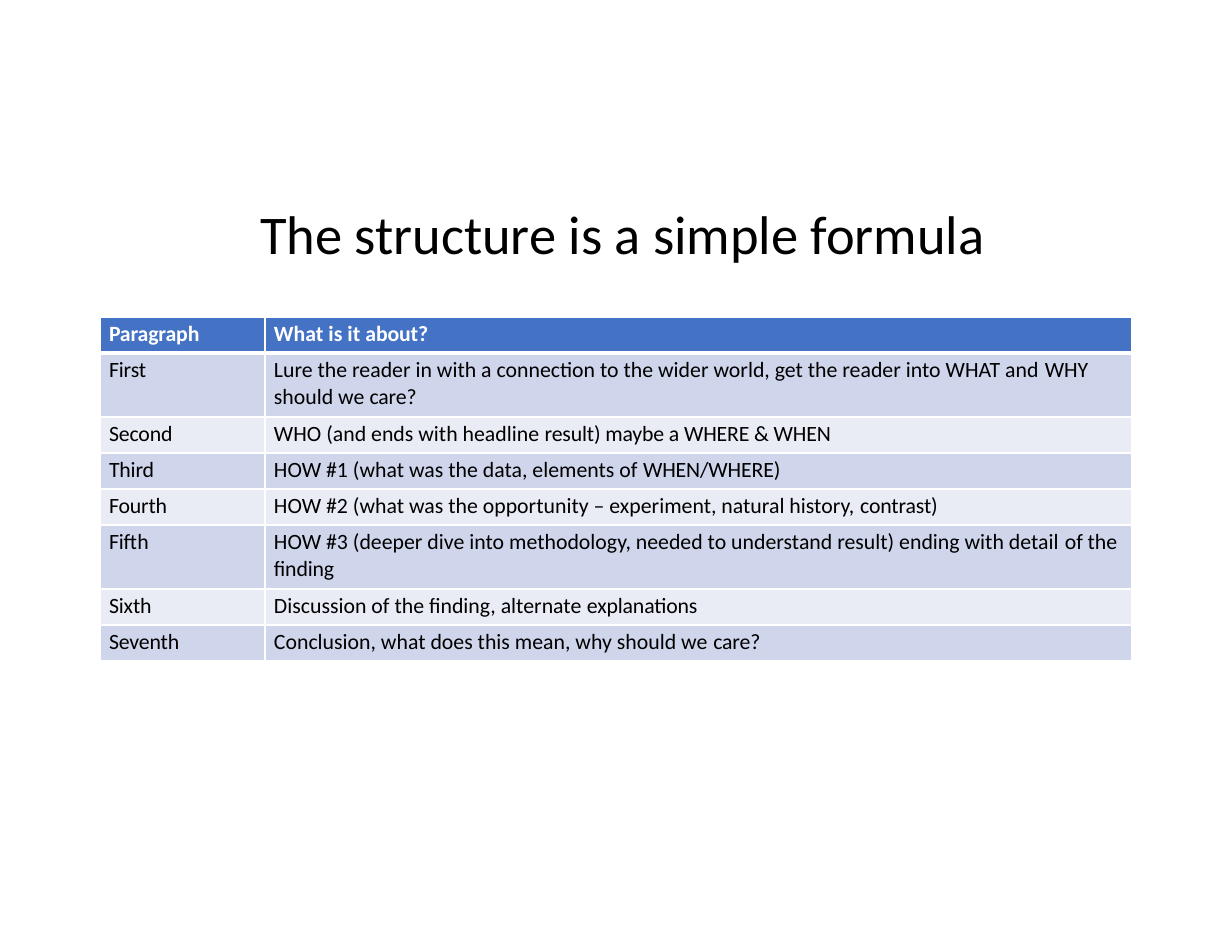
"""Build a slide with a table that outlines a seven-paragraph article."""
from pptx import Presentation
from pptx.dml.color import RGBColor
from pptx.enum.text import MSO_ANCHOR as Anchor, PP_ALIGN as Align
from pptx.oxml import parse_xml
from pptx.oxml.ns import nsdecls
from pptx.util import Emu, Pt

BLACK = RGBColor(0x00, 0x00, 0x00)
WHITE = RGBColor(0xFF, 0xFF, 0xFF)
HEADER_BLUE = RGBColor(0x44, 0x72, 0xC4)
BAND_DARK = RGBColor(0xCF, 0xD5, 0xEA)
BAND_LIGHT = RGBColor(0xE9, 0xEB, 0xF5)

ROWS = [
    ("|Paragraph", "What is it |about?"),
    ("|First", "Lure the reader in with a connection to the wider world, get the reader "
               "into WHAT and |WHY |should we |care?"),
    ("|Second", "WHO (and ends with headline |result) maybe a WHERE & WHEN"),
    ("|Third", "HOW #1 (what was the data, elements of |WHEN/WHERE)"),
    ("|Fourth", "HOW #2 (what was the opportunity – experiment, natural history, |contrast)"),
    ("|Fifth", "HOW #3 (deeper dive into methodology, needed to understand result) "
               "ending with detail |of |the |finding"),
    ("|Sixth", "Discussion of the finding, alternate |explanations"),
    ("|Seventh", "Conclusion, what does this mean, why should we |care?"),
]
COLUMN_WIDTHS = (165, 867)
LINE_HEIGHT, TWO_LINE_HEIGHT = 36, 64
TWO_LINE_ROWS = (1, 5)


def px(length):
    return Emu(round(length * 914400 / 112))


class OutlineSlide:
    font_name = "Calibri"
    title_size = Pt(35)
    table_size = Pt(14)
    tight_spacing = "-10"

    def __init__(self, presentation):
        self.slide = presentation.slides.add_slide(presentation.slide_layouts[5])

    def style(self, font, size, color, bold=False):
        font.name, font.size, font.bold = self.font_name, size, bold
        font.color.rgb = color

    def title(self, text, left, top, width, height):
        shape = self.slide.shapes.title
        shape.left, shape.top, shape.width, shape.height = map(px, (left, top, width, height))
        frame = shape.text_frame
        frame.text = text
        frame.vertical_anchor = Anchor.TOP
        frame.margin_left = frame.margin_right = frame.margin_bottom = 0
        frame.margin_top = px(1)
        paragraph = frame.paragraphs[0]
        paragraph.alignment = Align.CENTER
        paragraph.space_before = Pt(1)
        self.style(paragraph.font, self.title_size, BLACK)

    def table(self, rows, left, top, widths, heights):
        table = self.slide.shapes.add_table(
            len(rows), len(widths), px(left), px(top), px(sum(widths)), px(sum(heights))).table
        for column, width in zip(table.columns, widths):
            column.width = px(width)
        for index, (row, height, texts) in enumerate(zip(table.rows, heights, rows)):
            row.height = px(height)
            for cell, text in zip(row.cells, texts):
                self.cell(cell, text, index)

    def cell(self, cell, text, row):
        is_header = row == 0
        self.borders(cell, top=3 if row == 1 else 1, bottom=3 if is_header else 1)
        cell.fill.solid()
        cell.fill.fore_color.rgb = (
            HEADER_BLUE if is_header else BAND_DARK if row % 2 else BAND_LIGHT)
        cell.margin_left, cell.margin_top = px(9), px(4)
        cell.margin_right = cell.margin_bottom = 0
        paragraph = cell.text_frame.paragraphs[0]
        paragraph.space_before = Pt(3)
        self.style(paragraph.font, self.table_size, WHITE if is_header else BLACK, is_header)
        for index, part in enumerate(text.split("|")):
            if part:
                run = paragraph.add_run()
                run.text = part
                if index % 2:
                    run._r.get_or_add_rPr().set("spc", self.tight_spacing)

    def borders(self, cell, top, bottom):
        properties = cell._tc.get_or_add_tcPr()
        for side, width in (("L", 1), ("R", 1), ("T", top), ("B", bottom)):
            properties.append(parse_xml(
                f'<a:ln{side} {nsdecls("a")} w="{Pt(width)}"><a:solidFill>'
                f'<a:srgbClr val="{WHITE}"/></a:solidFill></a:ln{side}>'))


def main():
    presentation = Presentation()
    presentation.slide_width, presentation.slide_height = px(1232), px(952)
    outline = OutlineSlide(presentation)
    outline.title("The structure is a simple formula", 107, 199, 1032, 69)
    heights = [TWO_LINE_HEIGHT if row in TWO_LINE_ROWS else LINE_HEIGHT
               for row in range(len(ROWS))]
    outline.table(ROWS, 100, 317, COLUMN_WIDTHS, heights)
    presentation.save("out.pptx")


if __name__ == "__main__":
    main()
